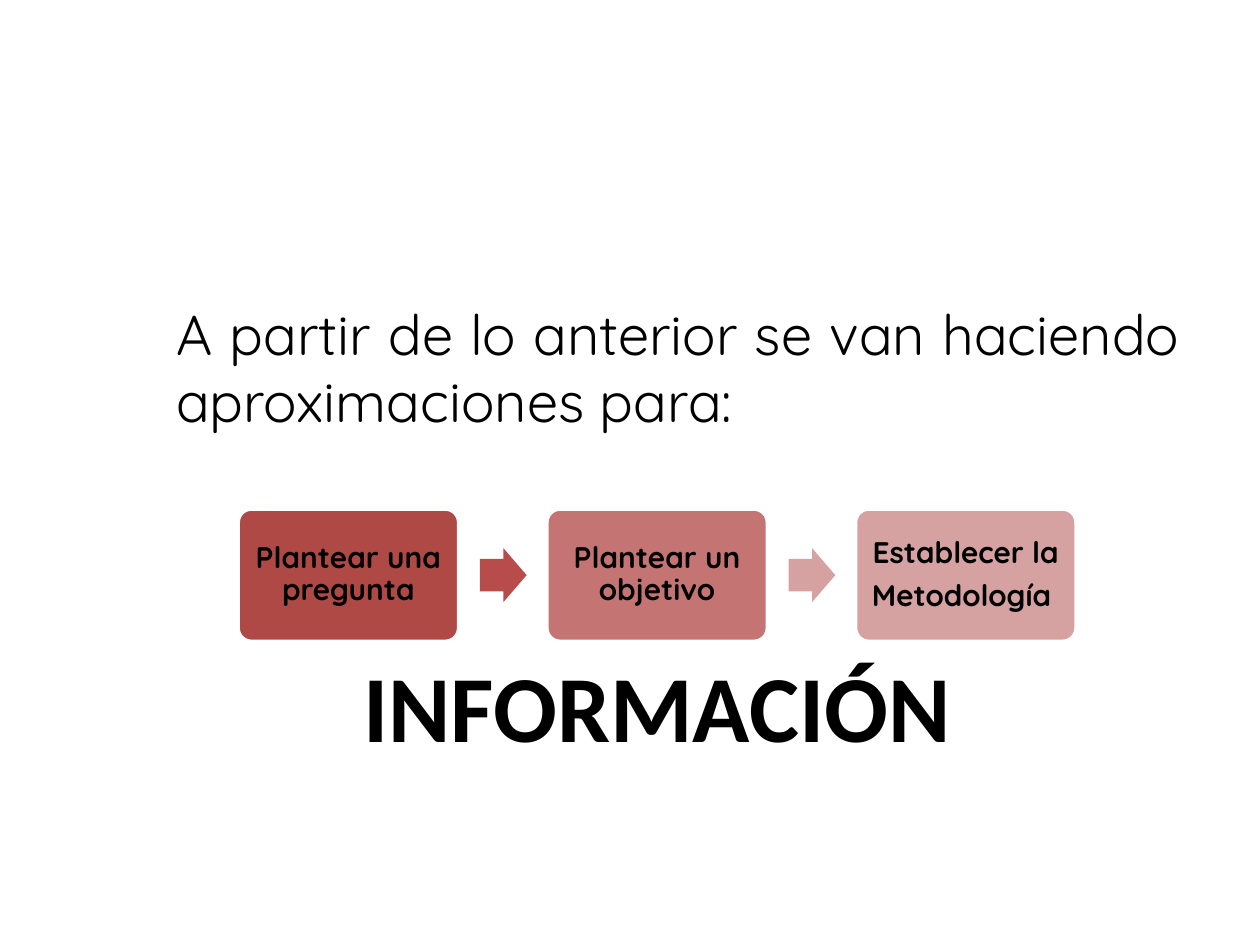
from pptx import Presentation
from pptx.dml.color import RGBColor
from pptx.enum import shapes, text
from pptx.util import Inches, Pt

BLACK = "000000"
WHITE = "FFFFFF"
STEPS = [
    (["Plantear una pregunta"], "AE4946"),
    (["Plantear un objetivo"], "C47472"),
    (["Establecer la", "Metodología "], "D6A2A1"),
]
ARROW_FILLS = ["B74C4A", "D6A1A1"]


def color(value):
    return RGBColor.from_string(value)


def style(paragraph, font_name, size, alignment, bold=False):
    paragraph.alignment = alignment
    paragraph.font.name = font_name
    paragraph.font.size = Pt(size)
    paragraph.font.bold = bold
    paragraph.font.color.rgb = color(BLACK)


def add_filled_shape(slide, kind, box, fill, adjustments):
    shape = slide.shapes.add_shape(kind, *map(Inches, box))
    shape.shadow.inherit = False
    shape.fill.solid()
    shape.fill.fore_color.rgb = color(fill)
    shape.line.fill.background()
    for index, value in enumerate(adjustments):
        shape.adjustments[index] = value
    return shape


def add_text(slide, box, words, font_name, size, alignment, bold=False, wrap=True):
    frame = slide.shapes.add_textbox(*map(Inches, box)).text_frame
    frame.word_wrap = wrap
    frame.text = words
    style(frame.paragraphs[0], font_name, size, alignment, bold)


def add_step(slide, box, lines, fill):
    shape = add_filled_shape(
        slide, shapes.MSO_SHAPE.ROUNDED_RECTANGLE, box, fill, [0.1])
    shape.line.color.rgb = color(WHITE)
    shape.line.width = Pt(2)
    frame = shape.text_frame
    frame.word_wrap = True
    frame.vertical_anchor = text.MSO_ANCHOR.MIDDLE
    frame.margin_left = frame.margin_right = Inches(0.04)
    frame.margin_top = frame.margin_bottom = Inches(0.04)
    frame.text = "\n".join(lines)
    for paragraph in frame.paragraphs:
        style(paragraph, "Quicksand", 17, text.PP_ALIGN.CENTER, bold=True)
        paragraph.line_spacing = 0.9
        paragraph.space_after = Pt(6)


def add_process(slide, left, top, width, height):
    step_width = 1.75
    arrow_width, arrow_height = 0.37, 0.43
    pitch = (width - step_width) / (len(STEPS) - 1)
    for index, (lines, fill) in enumerate(STEPS):
        add_step(slide, (left + index * pitch, top, step_width, height), lines, fill)

    # Arrows sit between neighbouring steps
    arrow_left = left + step_width + 0.17
    arrow_top = top + (height - arrow_height) / 2
    for index, fill in enumerate(ARROW_FILLS):
        box = (arrow_left + index * pitch, arrow_top, arrow_width, arrow_height)
        add_filled_shape(slide, shapes.MSO_SHAPE.RIGHT_ARROW, box, fill, [0.6, 0.5])


def main():
    presentation = Presentation()
    presentation.slide_width = Inches(10)
    presentation.slide_height = Inches(7.5)
    slide = presentation.slides.add_slide(presentation.slide_layouts[6])

    # Introduction
    add_text(slide, (1.3, 2.33, 8.17, 4.95),
             "A partir de lo anterior se van haciendo aproximaciones para:",
             "Quicksand", 32, text.PP_ALIGN.JUSTIFY)
    # Three steps
    add_process(slide, 1.89, 4.04, 6.65, 1.05)
    # Closing word
    add_text(slide, (2.4, 5.09, 5.63, 1.01), "INFORMACIÓN",
             "Calibri", 54, text.PP_ALIGN.CENTER, bold=True, wrap=False)

    presentation.save("out.pptx")


if __name__ == "__main__":
    main()
